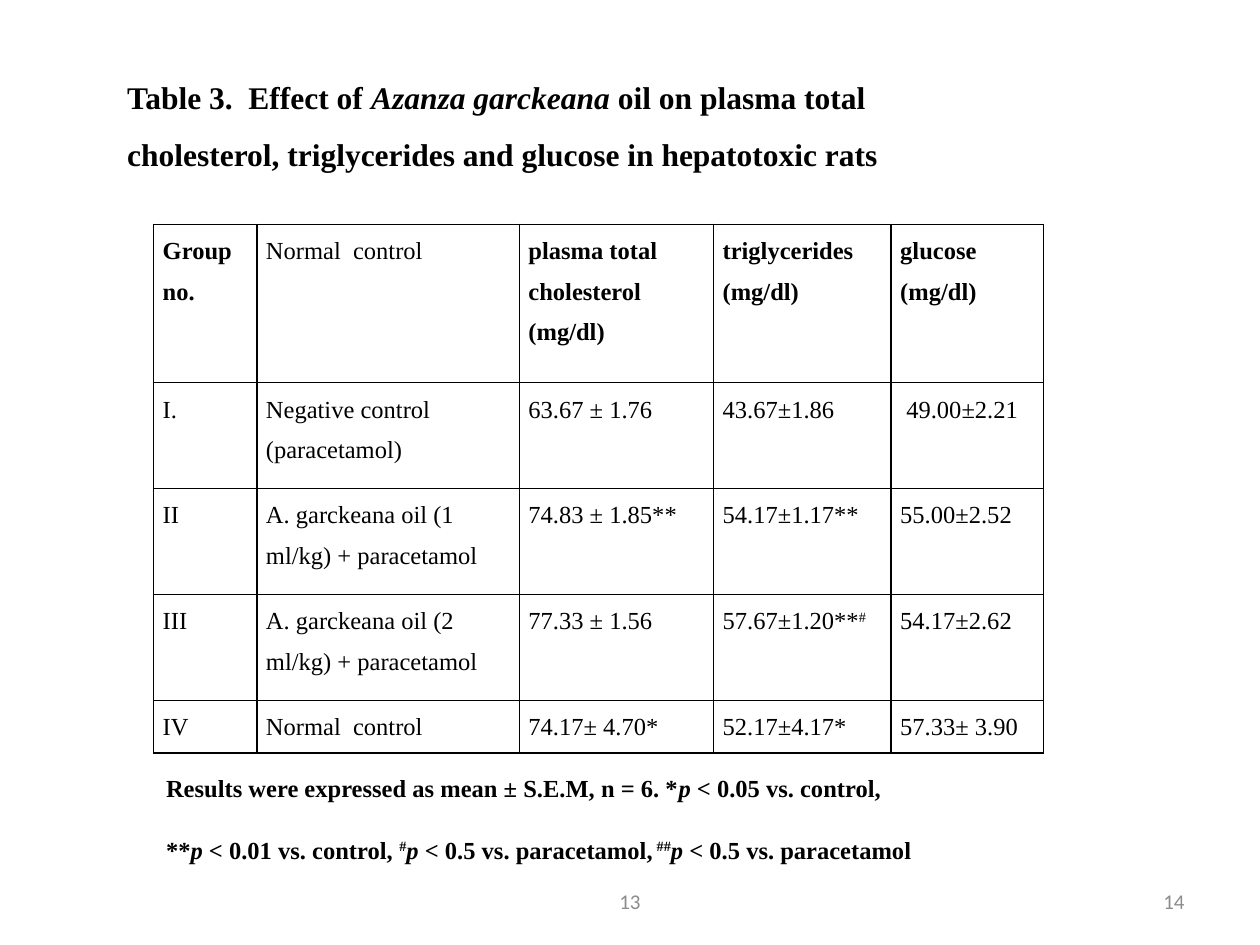
"""Build the slide with the table of plasma lipids and glucose in hepatotoxic rats."""
from lxml.etree import SubElement
from pptx import Presentation
from pptx.dml.color import RGBColor
from pptx.enum.text import MSO_ANCHOR, MSO_AUTO_SIZE, PP_ALIGN
from pptx.oxml.ns import qn
from pptx.util import Pt


def add_runs(paragraph, runs, size, bold=False, font="Times New Roman", color="000000"):
    for text, style in runs:
        run = paragraph.add_run()
        run.text = text
        run.font.name = font
        run.font.size = Pt(size)
        run.font.bold = bold
        run.font.italic = style == "italic"
        run.font.color.rgb = RGBColor.from_string(color)
        if style == "superscript":
            run._r.get_or_add_rPr().set("baseline", "30000")


def add_border(cell, side):
    line = SubElement(cell._tc.get_or_add_tcPr(), qn(f"a:{side}"), w=str(Pt(1)))
    fill = SubElement(line, qn("a:solidFill"))
    SubElement(fill, qn("a:srgbClr"), val="000000")


presentation = Presentation()
presentation.slide_width = Pt(720)
presentation.slide_height = Pt(540)
slide = presentation.slides.add_slide(presentation.slide_layouts[5])

title = slide.shapes.title
title.left, title.top, title.width, title.height = Pt(65.5), Pt(30.2), Pt(474.5), Pt(69)
title.text_frame.auto_size = MSO_AUTO_SIZE.NONE
title.text_frame.vertical_anchor = MSO_ANCHOR.TOP
paragraph = title.text_frame.paragraphs[0]
paragraph.alignment = PP_ALIGN.LEFT
paragraph.line_spacing = 1.5
paragraph.space_before = Pt(0)
paragraph.space_after = Pt(10)
add_runs(paragraph, [
    ("Table 3.  Effect of ", ""),
    ("Azanza garckeana ", "italic"),
    ("oil on plasma total cholesterol, triglycerides and glucose in hepatotoxic rats", ""),
], 18, bold=True)

rows = [
    ["Group\nno.", "Normal  control", "plasma total cholesterol\n(mg/dl)",
     "triglycerides\n(mg/dl)", "glucose\n(mg/dl)"],
    ["I.", "Negative control (paracetamol)", "63.67 ± 1.76", "43.67±1.86", " 49.00±2.21"],
    ["II", "A. garckeana oil (1 ml/kg) + paracetamol", "74.83 ± 1.85**", "54.17±1.17**", "55.00±2.52"],
    ["III", "A. garckeana oil (2 ml/kg) + paracetamol", "77.33 ± 1.56", "57.67±1.20**#", "54.17±2.62"],
    ["IV", "Normal  control", "74.17± 4.70*", "52.17±4.17*", "57.33± 3.90"],
]
column_widths = [59, 150, 111, 101.5, 87]
row_heights = [90.5, 60.5, 60.5, 60.5, 30]
table = slide.shapes.add_table(
    len(rows), len(column_widths), Pt(87.8), Pt(128.2),
    Pt(sum(column_widths)), Pt(sum(row_heights))).table
table.first_row = False
table.horz_banding = False
for column, width in zip(table.columns, column_widths):
    column.width = Pt(width)
for row_index, texts in enumerate(rows):
    table.rows[row_index].height = Pt(row_heights[row_index])
    for column_index, text in enumerate(texts):
        cell = table.cell(row_index, column_index)
        cell.margin_left = cell.margin_right = Pt(5.2)
        cell.margin_top = cell.margin_bottom = Pt(0)
        for side in ("lnL", "lnR", "lnT", "lnB"):
            add_border(cell, side)
        cell.fill.background()
        bold = row_index == 0 and column_index != 1
        for line_index, line in enumerate(text.split("\n")):
            frame = cell.text_frame
            paragraph = frame.add_paragraph() if line_index else frame.paragraphs[0]
            paragraph.line_spacing = 1.5
            value, mark, _ = line.partition("#")
            runs = [(value, ""), (mark, "superscript")] if mark else [(value, "")]
            add_runs(paragraph, runs, 14, bold)

notes = [
    [("Results were expressed as mean ± S.E.M, n = 6. *", ""), ("p ", "italic"),
     ("< 0.05 vs. control,", "")],
    [("**", ""), ("p ", "italic"), ("< 0.01 vs. control, ", ""),
     ("#", "superscript"), ("p ", "italic"), ("< 0.5 vs. paracetamol,", ""),
     (" ##", "superscript"), ("p ", "italic"), ("< 0.5 vs. paracetamol", "")],
]
footnote = slide.shapes.add_textbox(Pt(87.8), Pt(429.8), Pt(452.2), Pt(78))
footnote.text_frame.word_wrap = True
for index, runs in enumerate(notes):
    frame = footnote.text_frame
    paragraph = frame.add_paragraph() if index else frame.paragraphs[0]
    paragraph.line_spacing = 1.5
    paragraph.space_after = Pt(10)
    add_runs(paragraph, runs, 14, bold=True)

for text, left, width, alignment in [
    ("14", 516, 168, PP_ALIGN.RIGHT),
    ("13", 246, 228, PP_ALIGN.CENTER),
]:
    number = slide.shapes.add_textbox(Pt(left), Pt(500.5), Pt(width), Pt(28.8))
    number.text_frame.word_wrap = True
    number.text_frame.vertical_anchor = MSO_ANCHOR.MIDDLE
    paragraph = number.text_frame.paragraphs[0]
    paragraph.alignment = alignment
    add_runs(paragraph, [(text, "")], 12, font="Calibri", color="8C8C8C")

presentation.save("out.pptx")
